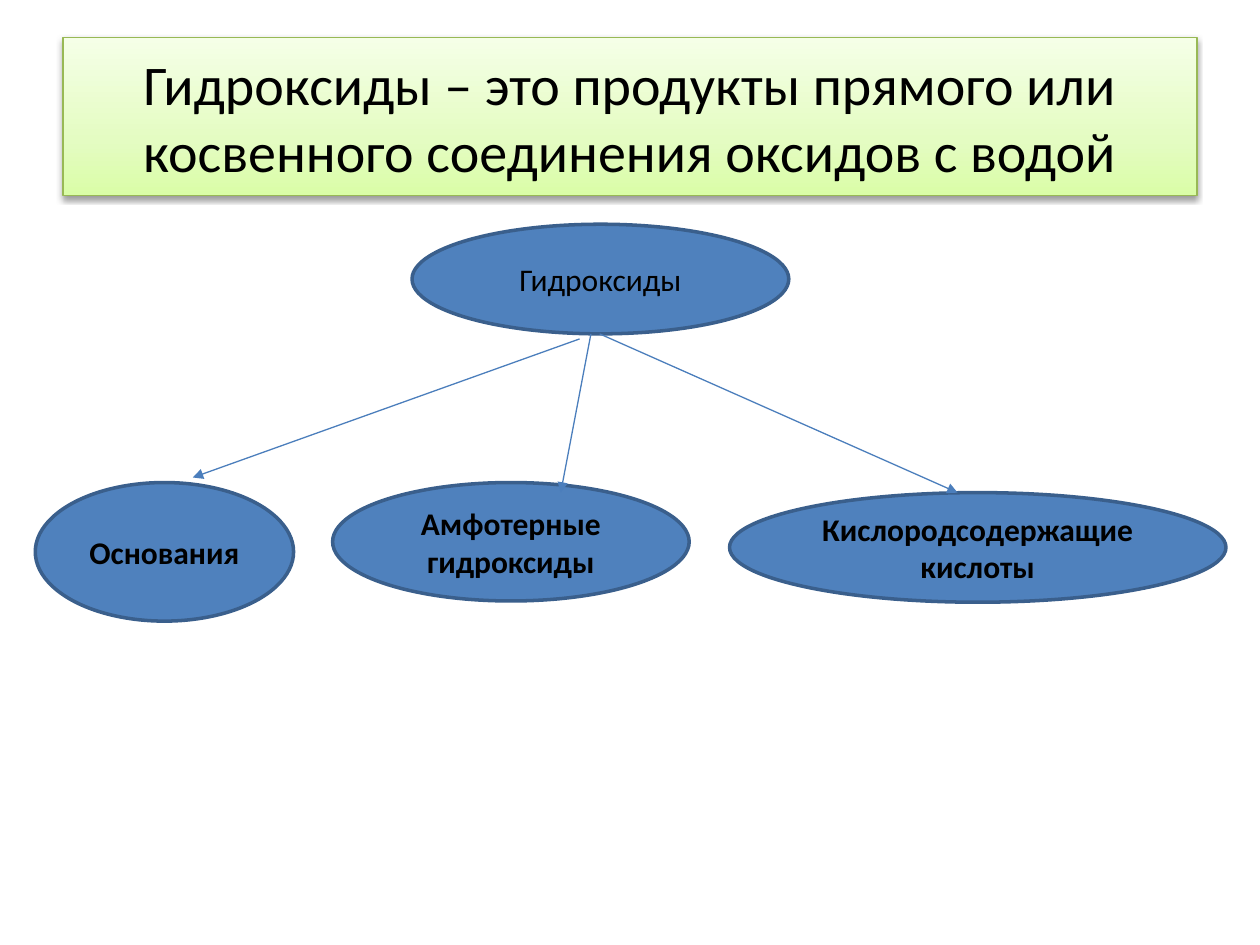
from lxml import etree
from pptx import Presentation
from pptx.dml.color import RGBColor
from pptx.enum.shapes import MSO_CONNECTOR, MSO_SHAPE
from pptx.enum.text import MSO_ANCHOR, PP_ALIGN
from pptx.oxml import parse_xml
from pptx.oxml.ns import qn
from pptx.util import Inches, Pt

RECTANGLE, OVAL = MSO_SHAPE.RECTANGLE, MSO_SHAPE.OVAL
STRAIGHT = MSO_CONNECTOR.STRAIGHT
MIDDLE, CENTER = MSO_ANCHOR.MIDDLE, PP_ALIGN.CENTER
DRAWING_NAMESPACE = "http://schemas.openxmlformats.org/drawingml/2006/main"

THEME = {
    "font": "Calibri",
    "text": "000000",
    "title_size": 32,
    "node_size": 18,
    "title_gradient": [(0, "DAFDA7"), (35, "E4FCC2"), (100, "F5FFE7")],
    "title_line": "98B955",
    "node_fill": "4F81BD",
    "node_line": "3A5F8C",
    "arrow": "4B7EBC",
    "thin": 0.75,
    "thick": 2,
}

TITLE = ("Гидроксиды – это продукты прямого или косвенного соединения оксидов с водой",
         (0.5, 0.3, 9, 1.25))
NODES = [
    ("Гидроксиды", (3.27, 1.78, 2.99, 0.87), False),
    ("Основания", (0.28, 3.83, 2.05, 1.1), True),
    ("Амфотерные гидроксиды", (2.64, 3.83, 2.83, 0.94), True),
    ("Кислородсодержащие кислоты", (5.79, 3.91, 3.94, 0.87), True),
]
ARROWS = [
    ((4.6, 2.69), (1.53, 3.79)),
    ((4.69, 2.65), (4.45, 3.91)),
    ((4.76, 2.65), (7.6, 3.91)),
]


def set_line(line, color, width):
    line.color.rgb = RGBColor.from_string(color)
    line.width = Pt(width)


def add_box(slide, kind, text, box, size, line_color, line_width, bold=False):
    shape = slide.shapes.add_shape(kind, *map(Inches, box))
    shape.shadow.inherit = False
    set_line(shape.line, line_color, line_width)
    frame = shape.text_frame
    frame.word_wrap = True
    frame.vertical_anchor = MIDDLE
    paragraph = frame.paragraphs[0]
    paragraph.text = text
    paragraph.alignment = CENTER
    font = paragraph.font
    font.name = THEME["font"]
    font.size = Pt(size)
    font.bold = bold
    font.color.rgb = RGBColor.from_string(THEME["text"])
    return shape


def add_title(slide):
    text, box = TITLE
    shape = add_box(slide, RECTANGLE, text, box, THEME["title_size"],
                    THEME["title_line"], THEME["thin"])
    stops = "".join(
        f'<a:gs pos="{position * 1000}"><a:srgbClr val="{color}"/></a:gs>'
        for position, color in THEME["title_gradient"])
    gradient = parse_xml(
        f'<a:gradFill xmlns:a="{DRAWING_NAMESPACE}" rotWithShape="1">'
        f'<a:gsLst>{stops}</a:gsLst><a:lin ang="16200000" scaled="0"/></a:gradFill>')
    properties = shape._element.spPr
    properties.find(qn("a:prstGeom")).addnext(gradient)
    shadow = parse_xml(
        f'<a:outerShdw xmlns:a="{DRAWING_NAMESPACE}" blurRad="{Pt(3.1)}" dist="{Pt(1.6)}" '
        'dir="5400000" rotWithShape="0"><a:srgbClr val="000000">'
        '<a:alpha val="38000"/></a:srgbClr></a:outerShdw>')
    properties.find(qn("a:effectLst")).append(shadow)


def add_node(slide, text, box, bold):
    shape = add_box(slide, OVAL, text, box, THEME["node_size"],
                    THEME["node_line"], THEME["thick"], bold)
    shape.fill.solid()
    shape.fill.fore_color.rgb = RGBColor.from_string(THEME["node_fill"])


def add_arrow(slide, start, end):
    connector = slide.shapes.add_connector(STRAIGHT, *map(Inches, start + end))
    set_line(connector.line, THEME["arrow"], THEME["thin"])
    properties = connector._element.spPr
    etree.SubElement(properties.find(qn("a:ln")), qn("a:tailEnd"), type="triangle")
    etree.SubElement(properties, qn("a:effectLst"))


def main():
    presentation = Presentation()
    presentation.slide_width = Inches(10)
    presentation.slide_height = Inches(7.5)
    slide = presentation.slides.add_slide(presentation.slide_layouts[6])
    add_title(slide)
    for node in NODES:
        add_node(slide, *node)
    for arrow in ARROWS:
        add_arrow(slide, *arrow)
    presentation.save("out.pptx")


if __name__ == "__main__":
    main()
